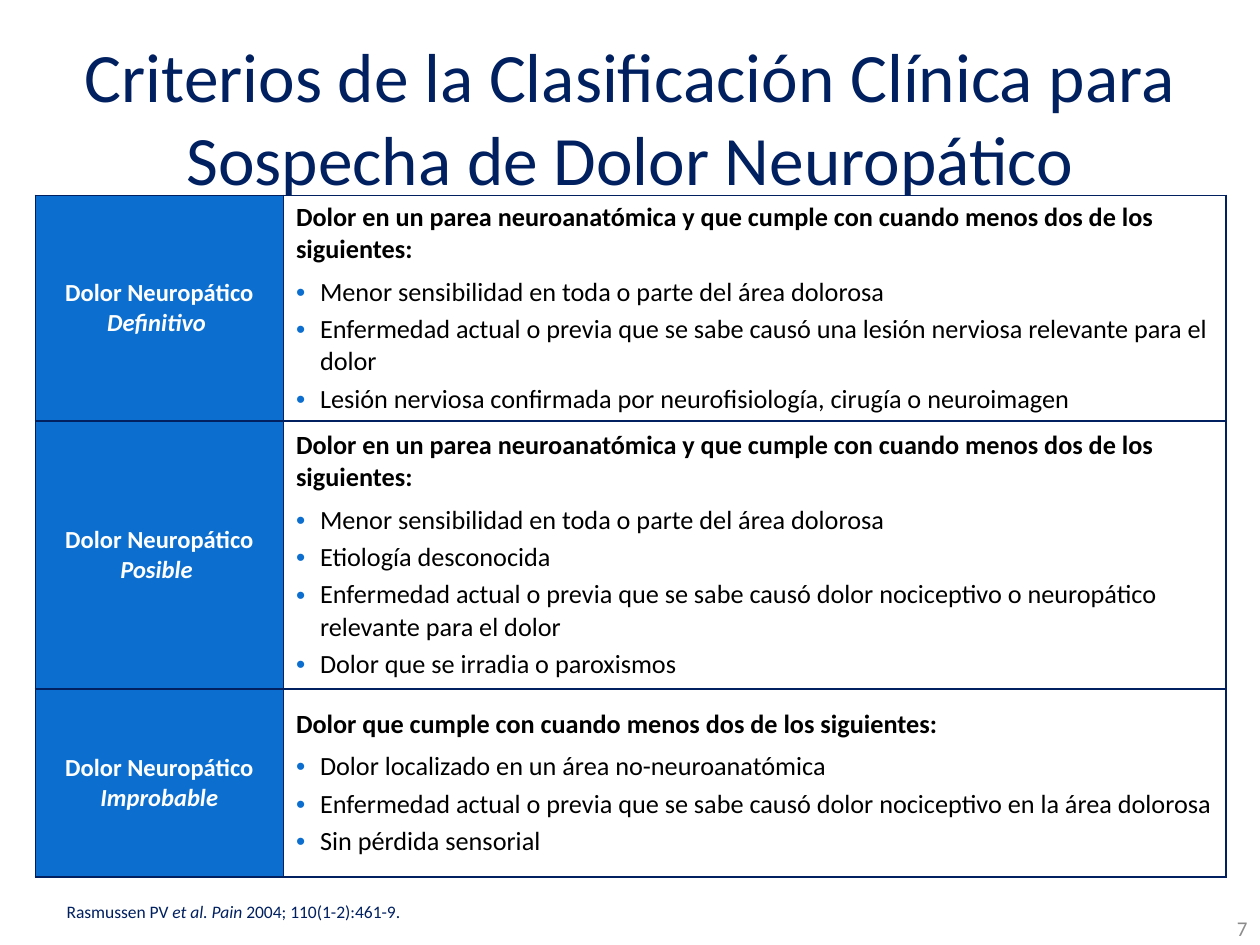
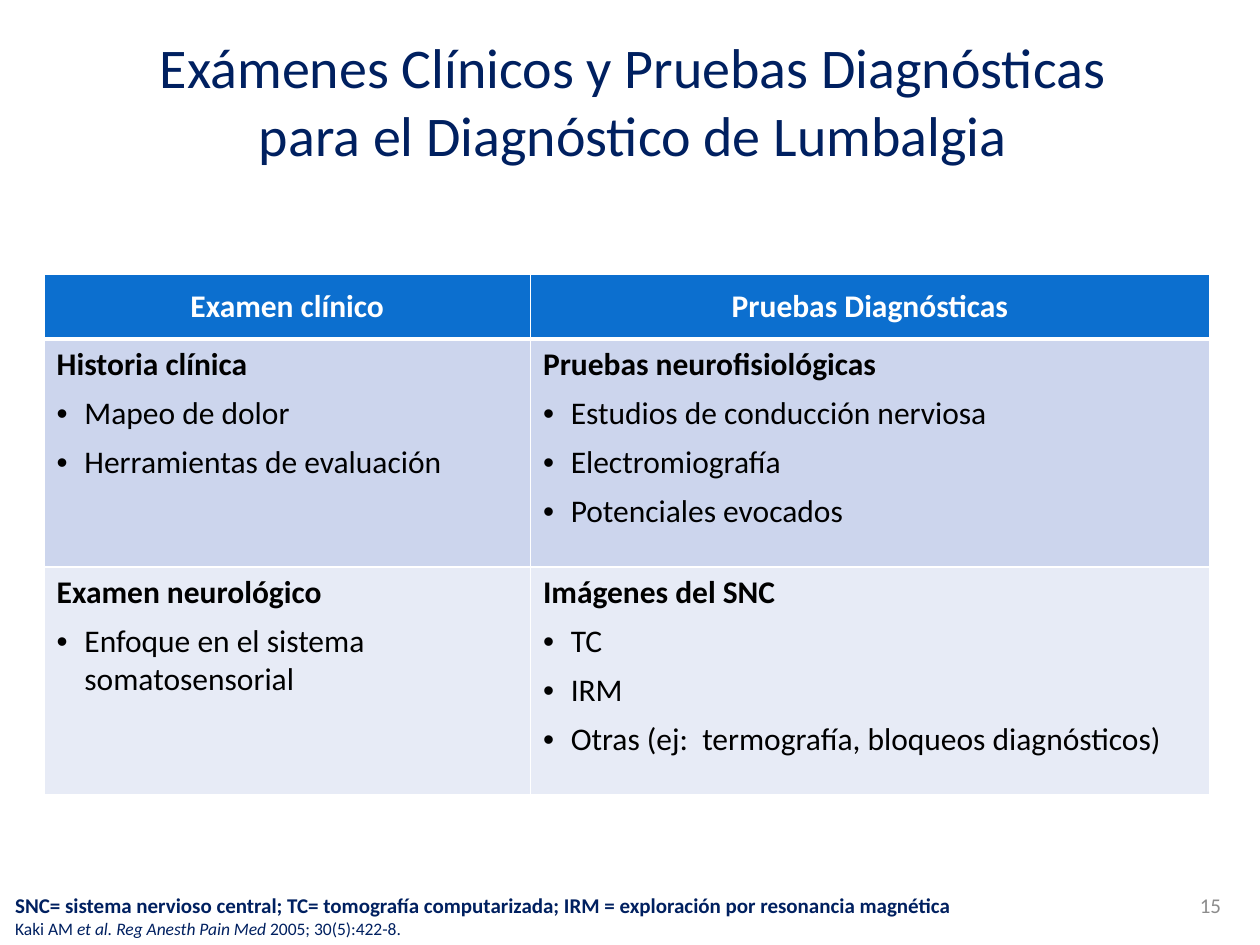
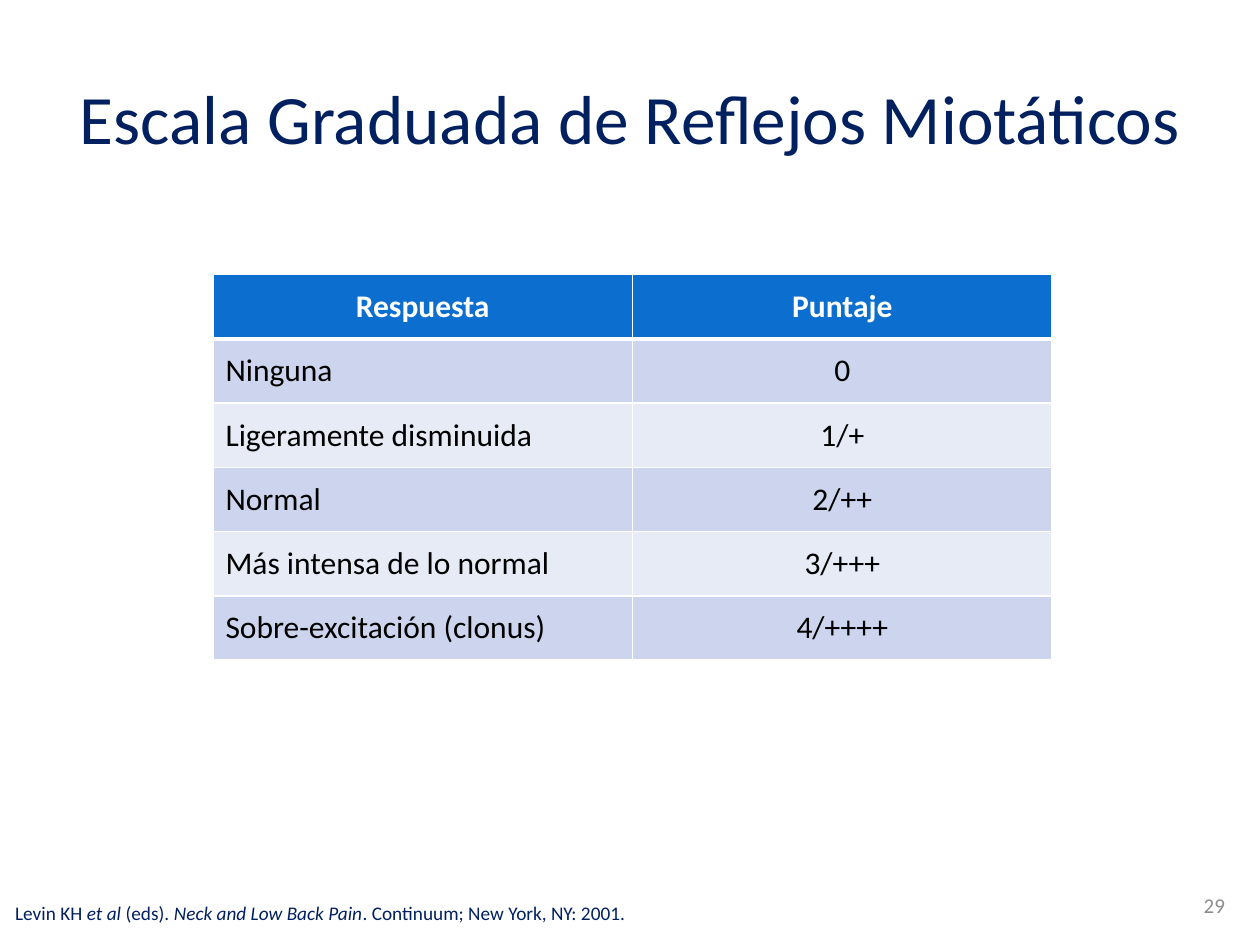
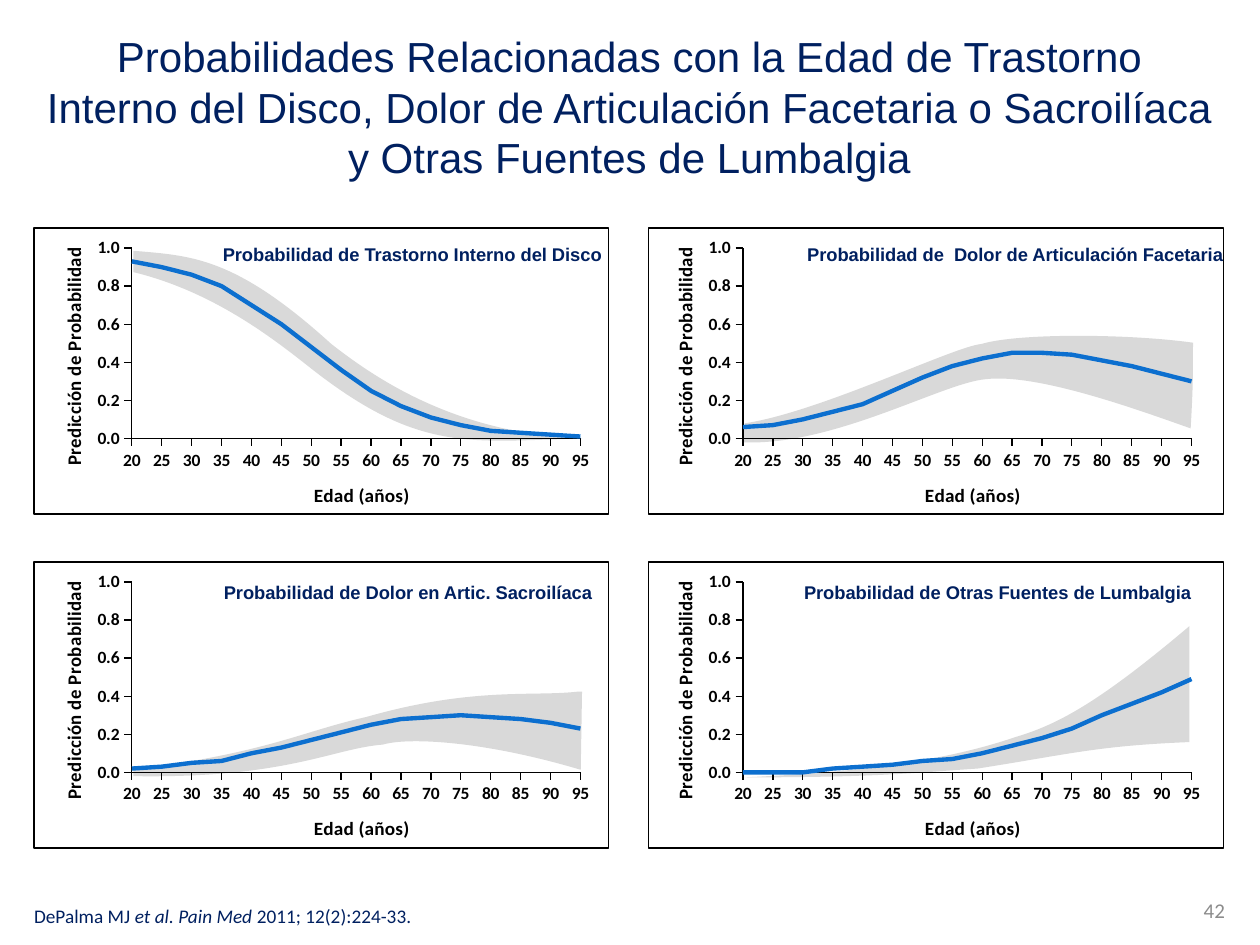
from lxml import etree
from pptx import Presentation
from pptx.chart.data import XyChartData
from pptx.dml.color import RGBColor
from pptx.enum.chart import XL_CHART_TYPE, XL_TICK_MARK
from pptx.enum.shapes import MSO_SHAPE
from pptx.enum.text import MSO_ANCHOR, PP_ALIGN
from pptx.oxml import parse_xml
from pptx.oxml.ns import nsdecls, qn
from pptx.util import Inches, Pt

LEFT, CENTER, RIGHT = PP_ALIGN.LEFT, PP_ALIGN.CENTER, PP_ALIGN.RIGHT
TOP, MIDDLE, BOTTOM = MSO_ANCHOR.TOP, MSO_ANCHOR.MIDDLE, MSO_ANCHOR.BOTTOM
SCATTER = XL_CHART_TYPE.XY_SCATTER_LINES_NO_MARKERS
OUTSIDE = XL_TICK_MARK.OUTSIDE

COLORS = {
    "navy": "002060", "blue": "0C6FCF", "black": "000000", "white": "FFFFFF",
    "gray": "8C8C8C", "band": "D9D9D9", "row_dark": "CCD5ED", "row_light": "E7EBF6",
}


def write(tf, text, size=18, color="black", font="Calibri", bold=False,
          align=LEFT, anchor=None, bullet=None, indent=0, after=0):
    """Add one paragraph; asterisks switch italics on and off."""
    p = tf.add_paragraph() if tf.text else tf.paragraphs[0]
    p.alignment = align
    p.space_after = Pt(after)
    if anchor is not None:
        tf.vertical_anchor = anchor
    if bullet:
        pPr = p._p.get_or_add_pPr()
        pPr.set("marL", str(Inches(indent)))
        pPr.set("indent", str(-Inches(indent)))
        clr = etree.SubElement(pPr, qn("a:buClr"))
        etree.SubElement(clr, qn("a:srgbClr")).set("val", COLORS[bullet])
        etree.SubElement(pPr, qn("a:buFont")).set("typeface", "Arial")
        etree.SubElement(pPr, qn("a:buChar")).set("char", "•")
    for i, part in enumerate(text.split("*")):
        if not part:
            continue
        r = p.add_run()
        r.text = part
        r.font.name, r.font.size = font, Pt(size)
        r.font.bold, r.font.italic = bold, i % 2 == 1
        r.font.color.rgb = RGBColor.from_string(COLORS[color])


def style_cell(cell, fill, line, bottom=1):
    """Fill a cell and draw its four borders."""
    cell.fill.solid()
    cell.fill.fore_color.rgb = RGBColor.from_string(COLORS[fill])
    tcPr = cell._tc.get_or_add_tcPr()
    for i, (side, width) in enumerate([("L", 1), ("R", 1), ("T", 1), ("B", bottom)]):
        tcPr.insert(i, parse_xml(
            f'<a:ln{side} {nsdecls("a")} w="{Pt(width)}"><a:solidFill>'
            f'<a:srgbClr val="{COLORS[line]}"/></a:solidFill></a:ln{side}>'))


prs = Presentation()
prs.slide_width, prs.slide_height = Inches(10), Inches(7.5)

# Titles, page numbers and sources
PAGES = [
    dict(title="Criterios de la Clasificación Clínica para Sospecha de Dolor Neuropático",
         box=(0.5, 0.3, 9, 1.25), size=39.6, font="Calibri",
         number="7", number_box=(7.92, 7.27, 2.08, 0.19),
         source=[("Rasmussen PV *et al. Pain* 2004; 110(1-2):461-9.", 10, False)],
         source_box=(0.43, 7.1, 2.89, 0.27), inset=True),
    dict(title="Exámenes Clínicos y Pruebas Diagnósticas para el Diagnóstico de Lumbalgia",
         box=(0.83, 0.36, 8.39, 0.87), size=32, font="Calibri",
         number="15", number_box=(7.46, 6.98, 2.33, 0.4),
         source=[("SNC= sistema nervioso central; TC= tomografía computarizada; "
                  "IRM = exploración por resonancia magnética", 12, True),
                 ("Kaki AM *et al. Reg Anesth Pain Med* 2005; 30(5):422-8.", 10, False)],
         source_box=(0.12, 7.01, 8.38, 0.44), inset=False),
    dict(title="Escala Graduada de Reflejos Miotáticos ",
         box=(0.5, 0.3, 9, 1.25), size=39.6, font="Calibri",
         number="29", number_box=(7.49, 6.98, 2.33, 0.4),
         source=[("Levin KH *et al *(eds). *Neck and Low Back Pain*. "
                  "Continuum; New York, NY: 2001.", 11, False)],
         source_box=(0.12, 6.9, 8.38, 0.44), inset=False),
    dict(title="Probabilidades Relacionadas con la Edad de Trastorno Interno del Disco, "
               "Dolor de Articulación Facetaria o Sacroilíaca y Otras Fuentes de Lumbalgia",
         box=(0.27, 0.3, 9.45, 1.09), size=24, font="Arial",
         number="42", number_box=(7.49, 7.02, 2.33, 0.4),
         source=[("DePalma MJ *et al. Pain Med* 2011; 12(2):224-33.", 11, False)],
         source_box=(0.27, 6.92, 8.38, 0.44), inset=False),
]
slides = []
for page in PAGES:
    s = prs.slides.add_slide(prs.slide_layouts[6])
    slides.append(s)
    title, number, source = [s.shapes.add_textbox(*map(Inches, page[key])).text_frame
                             for key in ("box", "number_box", "source_box")]
    title.word_wrap = number.word_wrap = True
    write(title, page["title"], size=page["size"], font=page["font"], color="navy",
          align=CENTER, anchor=MIDDLE)
    write(number, page["number"], size=12, color="gray", align=RIGHT, anchor=MIDDLE)
    source.word_wrap = not page["inset"]
    if not page["inset"]:
        source.margin_left = source.margin_right = 0
        source.margin_top = source.margin_bottom = 0
    for text, size, bold in page["source"]:
        write(source, text, size=size, bold=bold, color="navy",
              anchor=TOP if page["inset"] else BOTTOM)

# Slide 1: classification criteria
TWO_OR_MORE = ("Dolor en un parea neuroanatómica y que cumple con cuando menos dos "
               "de los siguientes:")
CRITERIA = [
    ("Definitivo ", 1.79, TWO_OR_MORE, [
        "Menor sensibilidad en toda o parte del área dolorosa",
        "Enfermedad actual o previa que se sabe causó una lesión nerviosa relevante para el dolor",
        "Lesión nerviosa confirmada por neurofisiología, cirugía o neuroimagen"]),
    ("Posible ", 2.13, TWO_OR_MORE, [
        "Menor sensibilidad en toda o parte del área dolorosa",
        "Etiología desconocida",
        "Enfermedad actual o previa que se sabe causó dolor nociceptivo o neuropático "
        "relevante para el dolor",
        "Dolor que se irradia o paroxismos"]),
    ("Improbable", 1.49, "Dolor que cumple con cuando menos dos de los siguientes:", [
        "Dolor localizado en un área no-neuroanatómica",
        "Enfermedad actual o previa que se sabe causó dolor nociceptivo en la área dolorosa",
        "Sin pérdida sensorial"]),
]
table = slides[0].shapes.add_table(3, 2, Inches(0.28), Inches(1.55),
                                   Inches(9.45), Inches(5.39)).table
table.first_row = table.horz_banding = False
table.columns[0].width, table.columns[1].width = Inches(1.97), Inches(7.48)
for i, (level, height, heading, items) in enumerate(CRITERIA):
    table.rows[i].height = Inches(height)
    label, detail = table.cell(i, 0), table.cell(i, 1)
    style_cell(label, "blue", "navy")
    style_cell(detail, "white", "navy")
    label.vertical_anchor = detail.vertical_anchor = MIDDLE
    write(label.text_frame, f"Dolor Neuropático *{level}*", size=14, color="white",
          bold=True, align=CENTER)
    write(detail.text_frame, heading, size=15, bold=True, after=6)
    for item in items:
        write(detail.text_frame, item, size=15, bullet="blue", indent=0.19,
              after=6 if item == items[-1] else 3)

# Slide 2: examinations and tests
EXAMS = [
    [["Historia clínica", "Mapeo de dolor", "Herramientas de evaluación"],
     ["Pruebas neurofisiológicas", "Estudios de conducción nerviosa",
      "Electromiografía", "Potenciales evocados"]],
    [["Examen neurológico", "Enfoque en el sistema somatosensorial"],
     ["Imágenes del SNC", "TC", "IRM", "Otras (ej:  termografía, bloqueos diagnósticos)"]],
]
# Slide 3: reflex scale
REFLEXES = [("Ninguna", "0"), ("Ligeramente disminuida", "1/+"), ("Normal", "2/++"),
            ("Más intensa de lo normal", "3/+++"), ("Sobre-excitación (clonus)", "4/++++")]

# Both tables share the header and the banded rows
TABLES = [
    (slides[1], 0.35, (3.86, 5.39), 1.81, ("Examen clínico", "Pruebas Diagnósticas"), EXAMS),
    (slides[2], 1.69, (3.33, 3.33), 0.51, ("Respuesta", "Puntaje"), REFLEXES),
]
for s, left, widths, height, header, rows in TABLES:
    table = s.shapes.add_table(len(rows) + 1, 2, Inches(left), Inches(2.18),
                               Inches(sum(widths)), Inches(0.51 + height * len(rows))).table
    table.first_row = table.horz_banding = False
    table.rows[0].height = Inches(0.51)
    for col, width in enumerate(widths):
        table.columns[col].width = Inches(width)
        cell = table.cell(0, col)
        style_cell(cell, "blue", "white", bottom=3)
        cell.vertical_anchor = MIDDLE
        write(cell.text_frame, header[col], color="white", bold=True, align=CENTER)
    for i, row in enumerate(rows, 1):
        table.rows[i].height = Inches(height)
        for col, content in enumerate(row):
            cell = table.cell(i, col)
            style_cell(cell, "row_dark" if i % 2 else "row_light", "white")
            if isinstance(content, str):
                cell.vertical_anchor = MIDDLE
                write(cell.text_frame, content, align=CENTER if col else LEFT)
                continue
            write(cell.text_frame, content[0], bold=True, after=6)
            for item in content[1:]:
                write(cell.text_frame, item, bullet="black", indent=0.22, after=6)

# Slide 4: confidence bands; each has a start, then curves (6 numbers) and lines (2)
s = slides[3]
BANDS = [
    [(5.91, 3.36), (6.51, 3.27, 7.57, 2.75, 7.79, 2.73), (8.09, 2.64, 8.98, 2.65, 9.47, 2.72),
     (9.46, 2.93, 9.48, 2.89, 9.45, 3.4), (9, 3.24, 8.22, 2.96, 7.82, 3.01),
     (7.48, 3.04, 6.62, 3.54, 5.9, 3.51)],
    [(5.91, 6.17), (6.52, 6.14, 7.36, 6.09, 8.06, 5.85), (8.4, 5.75, 8.73, 5.57, 9.44, 4.97),
     (9.44, 5.89), (8.71, 5.92, 8.52, 5.98, 7.76, 6.1), (7.29, 6.13, 7.01, 6.17, 5.91, 6.17)],
    [(1.06, 6.11), (2.14, 5.97, 2.38, 5.81, 2.91, 5.69), (3.75, 5.45, 4.22, 5.53, 4.58, 5.49),
     (4.62, 5.49), (4.61, 6.11), (3.84, 5.88, 3.24, 5.85, 3.04, 5.91),
     (2.64, 5.94, 2.28, 6.18, 1.06, 6.16)],
    [(1.06, 1.99), (1.51, 2.03, 1.86, 2.03, 2.63, 2.73), (2.99, 3.01, 3.62, 3.44, 4.62, 3.48),
     (3.74, 3.5, 3.34, 3.6, 2.49, 2.94), (2.21, 2.72, 1.72, 2.32, 1.06, 2.16)],
]
for start, *segments in BANDS:
    builder = s.shapes.build_freeform(Inches(start[0]), Inches(start[1]))
    builder.add_line_segments([(Inches(seg[-2]), Inches(seg[-1])) for seg in segments],
                              close=True)
    sp = builder.convert_to_shape()
    sp.shadow.inherit = False
    sp.fill.solid()
    sp.fill.fore_color.rgb = RGBColor.from_string(COLORS["band"])
    sp.line.fill.background()
    # Bend the segments that have control points
    for seg, node in zip(segments, sp.element.findall(".//" + qn("a:lnTo"))):
        if len(seg) == 2:
            continue
        node.tag = qn("a:cubicBezTo")
        for k in (0, 2):
            pt = etree.Element(qn("a:pt"), x=str(Inches(seg[k]) - sp.left),
                               y=str(Inches(seg[k + 1]) - sp.top))
            node.insert(k // 2, pt)

# Slide 4: framed charts in a grid of two by two
AGES = range(20, 100, 5)
PANELS = [
    ("Probabilidad de Trastorno Interno del Disco", (1.54, 1.88, 3.47, 0.28),
     [0.93, 0.9, 0.86, 0.8, 0.7, 0.6, 0.48, 0.36, 0.25, 0.17, 0.11, 0.07, 0.04, 0.03, 0.02, 0.01]),
    ("Probabilidad de  Dolor de Articulación Facetaria", (6.26, 1.88, 3.6, 0.28),
     [0.06, 0.07, 0.1, 0.14, 0.18, 0.25, 0.32, 0.38, 0.42, 0.45, 0.45, 0.44, 0.41, 0.38, 0.34, 0.3]),
    ("Probabilidad de Dolor en Artic. Sacroilíaca", (1.65, 4.56, 3.18, 0.28),
     [0.02, 0.03, 0.05, 0.06, 0.1, 0.13, 0.17, 0.21, 0.25, 0.28, 0.29, 0.3, 0.29, 0.28, 0.26, 0.23]),
    ("Probabilidad de Otras Fuentes de Lumbalgia", (6.26, 4.56, 3.32, 0.28),
     [0, 0, 0, 0.02, 0.03, 0.04, 0.06, 0.07, 0.1, 0.14, 0.18, 0.23, 0.3, 0.36, 0.42, 0.49]),
]
NO_FILL = f'<c:spPr {nsdecls("c", "a")}><a:noFill/><a:ln><a:noFill/></a:ln></c:spPr>'
LAYOUT = (f'<c:layout {nsdecls("c")}><c:manualLayout>%s<c:xMode val="edge"/>'
          '<c:yMode val="edge"/><c:x val="%s"/><c:y val="%s"/>%s</c:manualLayout></c:layout>')
PLOT_LAYOUT = LAYOUT % ('<c:layoutTarget val="inner"/>', 0.17, 0.068,
                        '<c:w val="0.779"/><c:h val="0.688"/>')
for i, (caption, box, values) in enumerate(PANELS):
    row, col = divmod(i, 2)
    top = 1.81 + 2.65 * row

    # Frame
    sp = s.shapes.add_shape(MSO_SHAPE.RECTANGLE, Inches(0.27 + 4.88 * col), Inches(top),
                            Inches(4.56), Inches(2.27))
    sp.shadow.inherit = False
    sp.fill.background()
    sp.line.color.rgb = RGBColor.from_string(COLORS["black"])
    sp.line.width = Pt(0.75)

    # Chart
    data = XyChartData(number_format="#,##0.0")
    series = data.add_series("Series 1")
    for age, value in zip(AGES, values):
        series.add_data_point(age, value)
    chart = s.shapes.add_chart(SCATTER, Inches(0.27 + 4.85 * col), Inches(top + 0.01),
                               Inches(4.57), Inches(2.25), data).chart
    chart.has_title = chart.has_legend = False
    chart.font.name, chart.font.size, chart.font.bold = "Calibri", Pt(10), True
    chart.font.color.rgb = RGBColor.from_string(COLORS["black"])
    chart.plots[0].vary_by_categories = False
    line = chart.plots[0].series[0]
    line.smooth = False
    line.format.line.width = Pt(2.5)
    line.format.line.color.rgb = RGBColor.from_string(COLORS["blue"])

    # Axes
    for axis, name, low, high, unit, fmt, x, y in [
            (chart.category_axis, "Edad (años) ", 20, 95, 5, "General", 0.48, 0.9),
            (chart.value_axis, "Predicción de Probabilidad ", 0, 1, 0.2, "#,##0.0", 0.04, 0.07)]:
        axis.minimum_scale, axis.maximum_scale, axis.major_unit = low, high, unit
        axis.has_major_gridlines = False
        axis.major_tick_mark = OUTSIDE
        axis.tick_labels.number_format = fmt
        axis.tick_labels.number_format_is_linked = False
        axis.tick_labels.font.size, axis.tick_labels.font.bold = Pt(10), True
        axis.format.line.width = Pt(0.75)
        axis.format.line.color.rgb = RGBColor.from_string(COLORS["black"])
        write(axis.axis_title.text_frame, name, size=11, bold=True, align=CENTER)
        title_xml = axis.axis_title.element
        for layout in title_xml.findall(qn("c:layout")):
            title_xml.remove(layout)
        title_xml.find(qn("c:tx")).addnext(parse_xml(LAYOUT % ("", x, y, "")))
    body = chart.value_axis.axis_title.element.find(".//" + qn("a:bodyPr"))
    body.set("rot", "-5400000")
    body.set("vert", "horz")

    # Transparent background and fixed plot area
    chart_xml = chart.element.find(qn("c:chart"))
    chart_xml.addnext(parse_xml(NO_FILL))
    plot_area = chart_xml.find(qn("c:plotArea"))
    for layout in plot_area.findall(qn("c:layout")):
        plot_area.remove(layout)
    plot_area.insert(0, parse_xml(PLOT_LAYOUT))
    plot_area.append(parse_xml(NO_FILL))

    # Caption
    tf = s.shapes.add_textbox(*map(Inches, box)).text_frame
    tf.word_wrap = i == 0
    write(tf, caption, size=10.5, color="navy", font="Arial", bold=True, align=CENTER)

prs.save("out.pptx")
